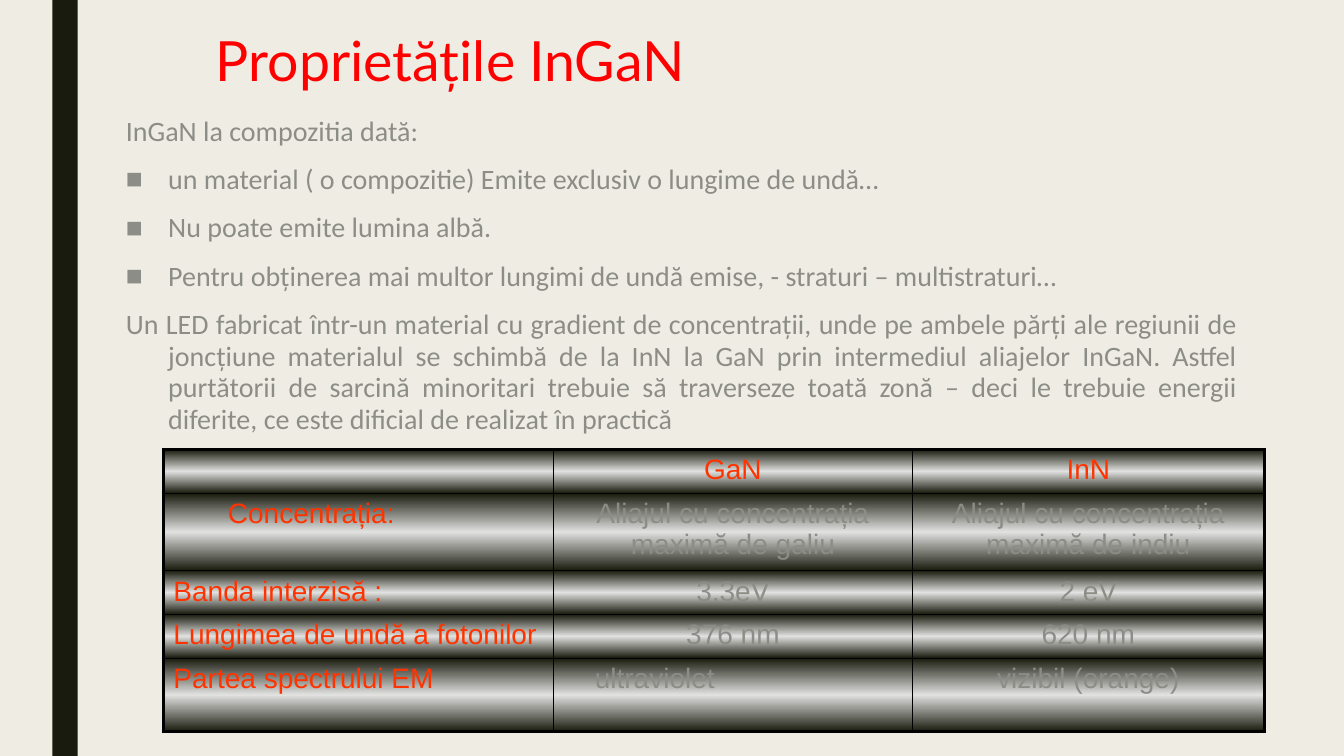
from lxml.etree import SubElement
from pptx import Presentation
from pptx.dml.color import RGBColor
from pptx.enum.shapes import MSO_SHAPE as Shape
from pptx.enum.text import MSO_ANCHOR as Anchor, PP_ALIGN as Align
from pptx.oxml.ns import qn
from pptx.util import Inches, Pt

CREAM = RGBColor(0xEF, 0xED, 0xE3)
DARK = RGBColor(0x19, 0x1B, 0x0E)
SILVER = RGBColor(0xE1, 0xE1, 0xE0)
GREY = RGBColor(0x8C, 0x8D, 0x86)
RED = RGBColor(0xFF, 0x00, 0x00)
ORANGE = RGBColor(0xFF, 0x33, 0x00)
BLACK = RGBColor(0x00, 0x00, 0x00)

INTRO = [
    ("InGaN la compozitia dată:", "plain"),
    ("un material ( o compozitie) Emite exclusiv o lungime de undă…", "bullet"),
    ("Nu poate emite lumina albă.", "bullet"),
    ("Pentru obținerea mai multor lungimi de undă emise, - straturi – multistraturi…", "bullet"),
    ("Un LED fabricat într-un material cu gradient de concentrații, unde pe ambele părți ale "
     "regiunii de joncțiune materialul se schimbă de la InN la GaN prin intermediul aliajelor "
     "InGaN. Astfel purtătorii de sarcină minoritari trebuie să traverseze toată zonă – deci le "
     "trebuie energii diferite, ce este dificial de realizat în practică", "hanging"),
]
PROPERTIES = [
    ["", "GaN", "InN"],
    ["Concentrația:", "Aliajul cu concentrația maximă de galiu",
     "Aliajul cu concentrația maximă de indiu"],
    ["Banda interzisă :", "3.3eV", "2 eV"],
    ["Lungimea de undă a fotonilor", "376 nm", "620 nm"],
    ["Partea spectrului EM", "ultraviolet", "vizibil (orange)"],
]
COLUMN_WIDTHS = [3.87, 3.56, 3.49]
ROW_HEIGHTS = [0.4, 0.72, 0.41, 0.41, 0.73]
CELL_INDENTS = {(1, 0): 0.54, (4, 1): 0.31}


class PageBuilder:
    def __init__(self, deck):
        self.page = deck.slides.add_slide(deck.slide_layouts[5])
        background = self.page.background.fill
        background.solid()
        background.fore_color.rgb = CREAM

    def add_span(self, para, text, font, size, color):
        span = para.add_run()
        span.text = text
        span.font.name = font
        span.font.size = Pt(size)
        span.font.color.rgb = color

    def bar(self, left, top, width, height):
        box = self.page.shapes.add_shape(
            Shape.RECTANGLE, Inches(left), Inches(top), Inches(width), Inches(height))
        box.shadow.inherit = False
        box.fill.solid()
        box.fill.fore_color.rgb = DARK
        box.line.fill.background()

    def title(self, text, left, top, width, height):
        box = self.page.shapes.title
        box.left, box.top = Inches(left), Inches(top)
        box.width, box.height = Inches(width), Inches(height)
        box.text_frame.vertical_anchor = Anchor.MIDDLE
        para = box.text_frame.paragraphs[0]
        para.alignment = Align.LEFT
        para.line_spacing = 0.89
        self.add_span(para, text, "Lato", 39.6, RED)

    def body(self, entries, left, top, width, height):
        frame = self.page.shapes.add_textbox(
            Inches(left), Inches(top), Inches(width), Inches(height)).text_frame
        frame.word_wrap = True
        for index, (text, kind) in enumerate(entries):
            para = frame.add_paragraph() if index else frame.paragraphs[0]
            para.line_spacing = 0.94
            para.space_before, para.space_after = Pt(10), Pt(2)
            if kind != "plain":
                self.hang(para, bullet=kind == "bullet")
            self.add_span(para, text, "Calibri", 20, GREY)

    def hang(self, para, bullet):
        para.alignment = Align.JUSTIFY
        properties = para._p.get_or_add_pPr()
        properties.set("marL", str(Inches(0.42)))
        properties.set("indent", str(Inches(-0.42)))
        if bullet:
            SubElement(properties, qn("a:buFont"), typeface="Arial")
            SubElement(properties, qn("a:buChar"), char="■")

    def table(self, rows, left, top, widths, heights):
        table = self.page.shapes.add_table(
            len(rows), len(widths), Inches(left), Inches(top),
            Inches(sum(widths)), Inches(sum(heights))).table
        table.first_row = table.horz_banding = False
        for column, width in zip(table.columns, widths):
            column.width = Inches(width)
        for row, height in zip(table.rows, heights):
            row.height = Inches(height)
        last_row, last_column = len(rows) - 1, len(widths) - 1
        for r, texts in enumerate(rows):
            for c, text in enumerate(texts):
                cell = table.cell(r, c)
                outer = {"L": c == 0, "R": c == last_column, "T": r == 0, "B": r == last_row}
                self.cell_style(cell, outer)
                para = cell.text_frame.paragraphs[0]
                indent = CELL_INDENTS.get((r, c), 0)
                para.alignment = Align.LEFT if c == 0 or indent else Align.CENTER
                para.space_before = Pt(4)
                if indent:
                    para._p.get_or_add_pPr().set("marL", str(Inches(indent)))
                if text:
                    self.add_span(para, text, "Arial", 20, GREY if r and c else ORANGE)

    def cell_style(self, cell, outer):
        properties = cell._tc.get_or_add_tcPr()
        for side, is_outer in outer.items():
            line = SubElement(properties, qn(f"a:ln{side}"), w=str(Pt(2.25 if is_outer else 1)))
            solid = SubElement(line, qn("a:solidFill"))
            SubElement(solid, qn("a:srgbClr"), val=str(BLACK))
        gradient = SubElement(properties, qn("a:gradFill"), rotWithShape="1")
        stops = SubElement(gradient, qn("a:gsLst"))
        for percent, color in [(0, DARK), (50, SILVER), (100, DARK)]:
            stop = SubElement(stops, qn("a:gs"), pos=str(percent * 1000))
            SubElement(stop, qn("a:srgbClr"), val=str(color))
        SubElement(gradient, qn("a:lin"), ang=str(90 * 60000), scaled="1")


def main():
    deck = Presentation()
    deck.slide_width, deck.slide_height = Inches(13.33), Inches(7.5)
    builder = PageBuilder(deck)
    builder.bar(0.52, 0, 0.25, 7.5)
    builder.title("Proprietățile InGaN", 2.04, 0.27, 10.5, 0.73)
    builder.body(INTRO, 1.15, 1.1, 11.22, 3.36)
    builder.table(PROPERTIES, 1.62, 4.46, COLUMN_WIDTHS, ROW_HEIGHTS)
    deck.save("out.pptx")


if __name__ == "__main__":
    main()
